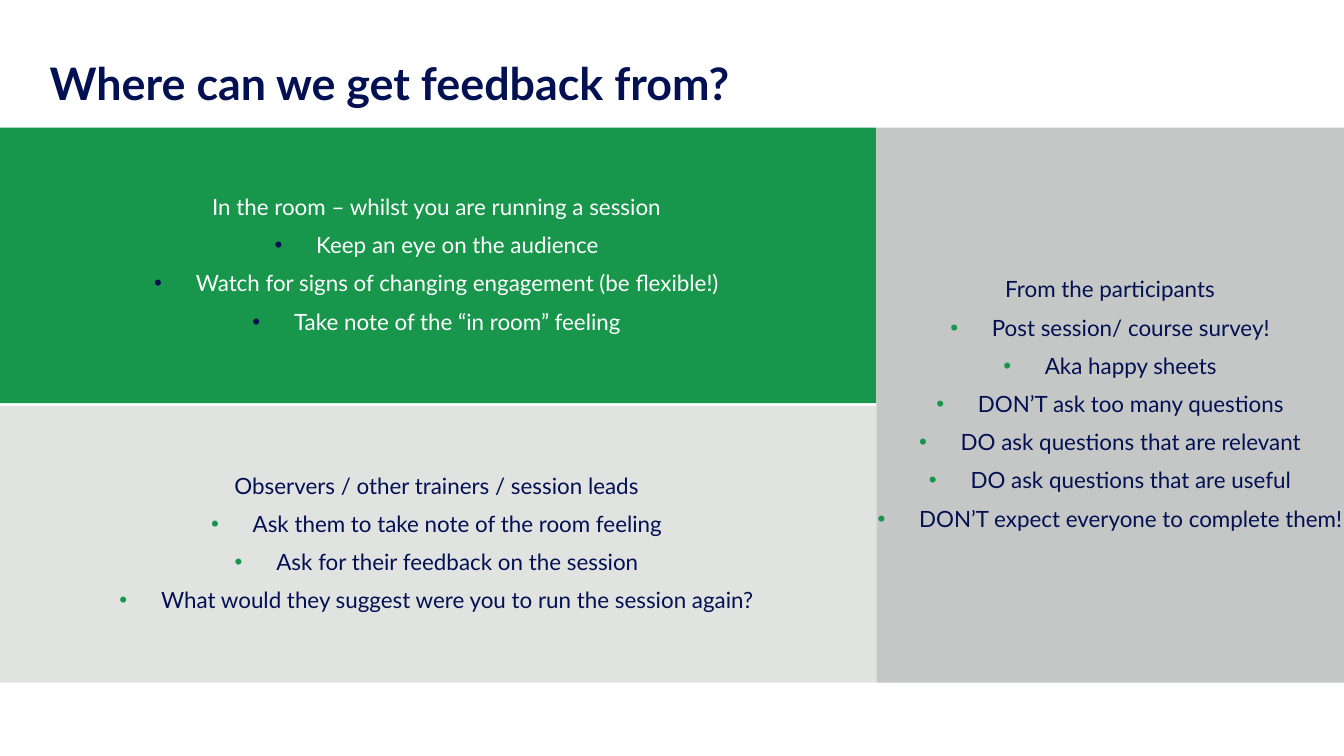
from dataclasses import dataclass

import lxml.etree
import pptx
import pptx.dml.color
import pptx.enum.shapes
import pptx.enum.text
import pptx.oxml.ns
import pptx.util
from pptx.util import Inches

COLOURS = {
    "navy": "031052",
    "green": "18974C",
    "light_grey": "E1E3E1",
    "mid_grey": "C4C7C6",
    "white": "FFFFFF",
}
FONT = "Lato"
INDENT = Inches(0.31)
PANEL_TOP = 0.95
PANEL_BOTTOM = 5.08
LEFT_EDGE = -0.02
COLUMN_SPLIT = 6.52
SLIDE_WIDTH = 10
SLIDE_HEIGHT = SLIDE_WIDTH * 9 / 16
ROW_GAP = 0.02
LOWER_TOP = 3.02


@dataclass
class Panel:
    left: float
    top: float
    right: float
    bottom: float
    fill: str
    text: str
    bullet: str
    heading: str
    points: list[str]


PANELS = [
    Panel(COLUMN_SPLIT, PANEL_TOP, SLIDE_WIDTH, PANEL_BOTTOM,
          "mid_grey", "navy", "green", "From the participants", [
              "Post session/ course survey!",
              "Aka happy sheets",
              "DON’T ask too many questions",
              "DO ask questions that are relevant",
              "DO ask questions that are useful",
              "DON’T expect everyone to complete them!",
          ]),
    Panel(LEFT_EDGE, LOWER_TOP, COLUMN_SPLIT, PANEL_BOTTOM,
          "light_grey", "navy", "green", "Observers / other trainers / session leads", [
              "Ask them to take note of the room feeling",
              "Ask for their feedback on the session",
              "What would they suggest were you to run the session again?",
          ]),
    Panel(LEFT_EDGE, PANEL_TOP, COLUMN_SPLIT, LOWER_TOP - ROW_GAP,
          "green", "white", "navy", "In the room – whilst you are running a session", [
              "Keep an eye on the audience",
              "Watch for signs of changing engagement (be flexible!)",
              "Take note of the “in room” feeling",
          ]),
]


def rgb(colour: str) -> pptx.dml.color.RGBColor:
    return pptx.dml.color.RGBColor.from_string(COLOURS[colour])


def add_element(parent, tag: str, **attributes: str):
    return lxml.etree.SubElement(parent, pptx.oxml.ns.qn(tag), attributes)


def set_insets(frame, left: float, right: float) -> None:
    frame.word_wrap = True
    frame.margin_left, frame.margin_right = Inches(left), Inches(right)
    frame.margin_top = frame.margin_bottom = Inches(0.05)


def style_paragraph(paragraph, size: int, colour: str, bold: bool = False) -> None:
    paragraph.line_spacing = 0.9
    font = paragraph.font
    font.name = FONT
    font.size = pptx.util.Pt(size)
    font.bold = bold
    font.color.rgb = rgb(colour)


def add_bullet(paragraph, colour: str) -> None:
    paragraph.space_before = pptx.util.Pt(7.5)
    properties = paragraph._p.get_or_add_pPr()
    properties.set("marL", str(INDENT))
    properties.set("indent", str(-INDENT))
    bullet_colour = add_element(properties, "a:buClr")
    add_element(bullet_colour, "a:srgbClr", val=COLOURS[colour])
    add_element(properties, "a:buFont", typeface="Arial")
    add_element(properties, "a:buChar", char="•")


def draw_divider(slide) -> None:
    divider = slide.shapes.add_connector(
        pptx.enum.shapes.MSO_CONNECTOR.STRAIGHT,
        Inches(6.67), Inches(3.01), Inches(0), Inches(3.01))
    divider.line.color.rgb = rgb("white")
    divider.line.width = pptx.util.Pt(0.75)
    add_element(divider._element.spPr, "a:effectLst")


def draw_title(slide, text: str) -> None:
    title = slide.shapes.add_textbox(Inches(0.37), Inches(0.3), Inches(9.24), Inches(0.57))
    frame = title.text_frame
    set_insets(frame, 0, 0.1)
    frame.vertical_anchor = pptx.enum.text.MSO_ANCHOR.BOTTOM
    frame.text = text
    style_paragraph(frame.paragraphs[0], 24, "navy", bold=True)


def draw_panel(slide, panel: Panel) -> None:
    area = slide.shapes.add_shape(
        pptx.enum.shapes.MSO_SHAPE.RECTANGLE,
        Inches(panel.left), Inches(panel.top),
        Inches(panel.right - panel.left), Inches(panel.bottom - panel.top))
    area.shadow.inherit = False
    area.fill.solid()
    area.fill.fore_color.rgb = rgb(panel.fill)
    area.line.fill.background()
    frame = area.text_frame
    set_insets(frame, 0, 0)
    frame.vertical_anchor = pptx.enum.text.MSO_ANCHOR.MIDDLE
    frame.text = "\n".join([panel.heading, *panel.points])
    for index, paragraph in enumerate(frame.paragraphs):
        paragraph.alignment = pptx.enum.text.PP_ALIGN.CENTER
        if index > 0:
            add_bullet(paragraph, panel.bullet)
        style_paragraph(paragraph, 12, panel.text)


def main() -> None:
    presentation = pptx.Presentation()
    presentation.slide_width = Inches(SLIDE_WIDTH)
    presentation.slide_height = Inches(SLIDE_HEIGHT)
    slide = presentation.slides.add_slide(presentation.slide_layouts[6])
    draw_divider(slide)
    draw_title(slide, "Where can we get feedback from?")
    for panel in PANELS:
        draw_panel(slide, panel)
    presentation.save("out.pptx")


if __name__ == "__main__":
    main()
